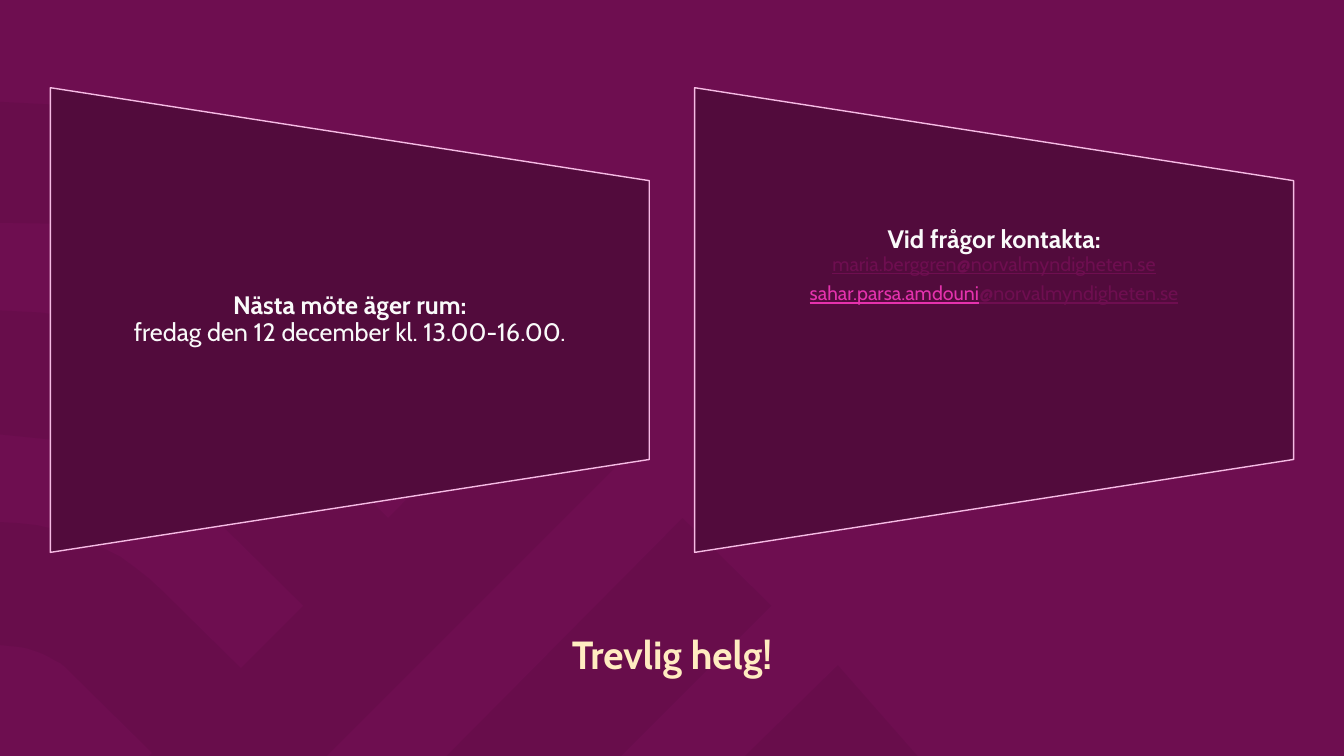
"""Build a closing slide with two cards and a weekend greeting."""
from pptx import Presentation
from pptx.dml.color import RGBColor
from pptx.enum.shapes import MSO_SHAPE
from pptx.enum.text import MSO_ANCHOR, MSO_AUTO_SIZE, PP_ALIGN
from pptx.oxml import parse_xml
from pptx.oxml.ns import nsdecls
from pptx.util import Emu, Pt

PX = 9144
FONT = "Cabin"
PLUM, DARK, PINK, ROSE = "6E0E50", "520B3C", "F6BBE4", "E532AD"
WHITE, CREAM, SHADE = "FAFAFA", "FFECC1", "370728"
CARD_TOP, CARD_WIDTH, CARD_HEIGHT = 87, 594, 461
TEXT_TOP = 179

PATTERN = [
    [(831, 660), (910, 750), (739, 750)],
    [(677, 514), (765, 601), (616, 750), (443, 750)],
    [(0, 101), (58, 104), (203, 118, 344, 180, 454, 291), (619, 455),
     (324, 750), (148, 750), (151, 747), (74, 671),
     (59, 655, 40, 645, 20, 642), (0, 640), (0, 518), (2, 518),
     (60, 519, 118, 542, 162, 587), (239, 663), (301, 601), (224, 525),
     (221, 521), (175, 476, 118, 448, 59, 437), (0, 431), (0, 308),
     (40, 310), (138, 320, 233, 362, 308, 437), (385, 514), (447, 451),
     (370, 375), (284, 287, 171, 234, 53, 222), (0, 221)],
]


def px(length):
    return Emu(round(length * PX))


def color(value):
    return RGBColor.from_string(value)


def curve_points(start, curve, steps=10):
    points = [start, curve[:2], curve[2:4], curve[4:]]
    for step in range(1, steps + 1):
        t = step / steps
        weights = ((1 - t) ** 3, 3 * t * (1 - t) ** 2, 3 * t * t * (1 - t), t ** 3)
        yield tuple(sum(w * p[axis] for w, p in zip(weights, points)) for axis in (0, 1))


def flatten(outline):
    points = [outline[0]]
    for segment in outline[1:]:
        if len(segment) == 6:
            points.extend(curve_points(points[-1], segment))
        else:
            points.append(segment)
    return points


def add_pattern(slide):
    first, *others = [flatten(outline) for outline in PATTERN]
    builder = slide.shapes.build_freeform(*first[0], scale=PX)
    builder.add_line_segments(first[1:], close=True)
    for points in others:
        builder.move_to(*points[0])
        builder.add_line_segments(points[1:], close=True)
    pattern = builder.convert_to_shape()
    pattern.shadow.inherit = False
    pattern.fill.solid()
    pattern.fill.fore_color.rgb = color(SHADE)
    pattern.line.fill.background()
    alpha = parse_xml(f'<a:alpha {nsdecls("a")} val="10000"/>')
    pattern.element.spPr.find(".//{*}srgbClr").append(alpha)


def style_span(span, size, value, bold=False, underline=False):
    span.font.name = FONT
    span.font.size = Pt(size)
    span.font.bold = bold
    span.font.underline = underline
    span.font.color.rgb = color(value)


def add_card(slide, left, text_height, lines):
    offset = (CARD_WIDTH - CARD_HEIGHT) / 2
    card = slide.shapes.add_shape(
        MSO_SHAPE.FLOWCHART_MANUAL_OPERATION, px(left + offset),
        px(CARD_TOP - offset), px(CARD_HEIGHT), px(CARD_WIDTH))
    card.rotation = 270
    card.shadow.inherit = False
    card.fill.solid()
    card.fill.fore_color.rgb = color(DARK)
    card.line.color.rgb = color(PINK)
    card.line.width = Pt(1)

    box = slide.shapes.add_textbox(px(left), px(TEXT_TOP), px(CARD_WIDTH), px(text_height))
    frame = box.text_frame
    frame.word_wrap = True
    frame.vertical_anchor = MSO_ANCHOR.MIDDLE
    frame.margin_left = frame.margin_right = px(12)
    frame.margin_top = frame.margin_bottom = 0
    for index, (space_after, spans) in enumerate(lines):
        para = frame.paragraphs[0] if index == 0 else frame.add_paragraph()
        para.alignment = PP_ALIGN.CENTER
        para.line_spacing = 0.9
        para.space_after = Pt(space_after)
        for text, *style in spans:
            span = para.add_run()
            span.text = text
            style_span(span, *style)


def add_greeting(slide, text):
    title = slide.shapes.title
    title.left, title.top, title.width, title.height = px(367), px(620), px(599), px(104)
    frame = title.text_frame
    frame.text = text
    frame.word_wrap = True
    frame.auto_size = MSO_AUTO_SIZE.NONE
    frame.vertical_anchor = MSO_ANCHOR.TOP
    para = frame.paragraphs[0]
    para.alignment = PP_ALIGN.CENTER
    style_span(para.runs[0], 28, CREAM, True)
    slide.shapes.element.append(title.element)


def main():
    deck = Presentation()
    deck.slide_width, deck.slide_height = px(1333), px(750)
    slide = deck.slides.add_slide(deck.slide_layouts[5])
    slide.background.fill.solid()
    slide.background.fill.fore_color.rgb = color(PLUM)
    add_pattern(slide)
    add_card(slide, 50, 277, [
        (0, [("Nästa möte äger rum:", 18, WHITE, True)]),
        (0, [("fredag den 12 december kl. 13.00-16.00.", 18, WHITE)]),
    ])
    add_card(slide, 689, 170, [
        (0, [("Vid frågor kontakta:", 18, WHITE, True)]),
        (6, [("maria.berggren@norvalmyndigheten.se", 14, PLUM, False, True)]),
        (0, [("sahar.parsa.amdouni", 14, ROSE, False, True),
             ("@norvalmyndigheten.se", 14, PLUM, False, True)]),
    ])
    add_greeting(slide, "Trevlig helg!")
    deck.save("out.pptx")


if __name__ == "__main__":
    main()
